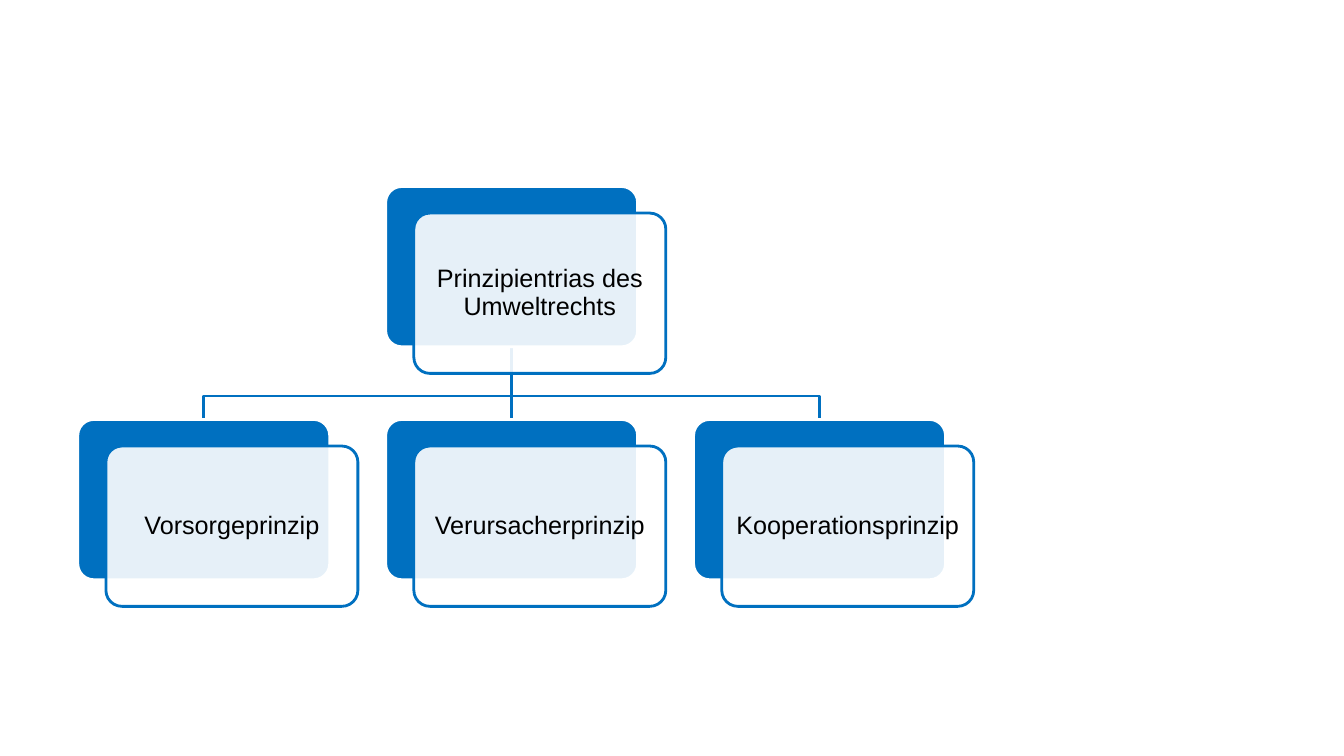
from lxml import etree
from pptx import Presentation
from pptx.dml.color import RGBColor
from pptx.enum.shapes import MSO_CONNECTOR, MSO_SHAPE
from pptx.enum.text import MSO_ANCHOR, PP_ALIGN
from pptx.oxml.ns import qn
from pptx.util import Cm, Pt

ROUNDED = MSO_SHAPE.ROUNDED_RECTANGLE
STRAIGHT = MSO_CONNECTOR.STRAIGHT
MIDDLE = MSO_ANCHOR.MIDDLE
CENTER = PP_ALIGN.CENTER
TOP_SIDE, BOTTOM_SIDE = 0, 2

BLUE, WHITE, BLACK = "0070C0", "FFFFFF", "000000"
CARD_WIDTH, CARD_HEIGHT = Cm(6.35), Cm(4.04)
SHIFT_X, SHIFT_Y = Cm(0.71), Cm(0.67)
CHART_LEFT, CHART_TOP = Cm(1.96), Cm(4.7)
COLUMN_STEP, ROW_STEP = Cm(7.76), Cm(5.87)
BEND_ABOVE_CHILD = Cm(0.59)

ROOT = "Prinzipientrias des Umweltrechts"
PRINCIPLES = ["Vorsorgeprinzip", "Verursacherprinzip", "Kooperationsprinzip"]


def color(hex_code):
    return RGBColor.from_string(hex_code)


def set_line(shape, hex_code):
    shape.line.color.rgb = color(hex_code)
    shape.line.width = Pt(2)


def add_panel(page, left, top, fill, line):
    panel = page.shapes.add_shape(ROUNDED, left, top, CARD_WIDTH, CARD_HEIGHT)
    panel.adjustments[0] = 0.1
    panel.shadow.inherit = False
    panel.fill.solid()
    panel.fill.fore_color.rgb = color(fill)
    set_line(panel, line)
    return panel


def add_card(page, left, top, text):
    """Draw a blue panel with a translucent label in front; return the blue panel."""
    back = add_panel(page, left, top, BLUE, WHITE)
    label = add_panel(page, left + SHIFT_X, top + SHIFT_Y, WHITE, BLUE)
    fill_color = label.fill._xPr.find(qn("a:solidFill"))[0]
    etree.SubElement(fill_color, qn("a:alpha"), val="90000")

    frame = label.text_frame
    frame.word_wrap = True
    frame.vertical_anchor = MIDDLE
    frame.margin_left = frame.margin_right = Cm(0.18)
    frame.margin_top = frame.margin_bottom = Cm(0.18)
    para = frame.paragraphs[0]
    para.text = text
    para.alignment = CENTER
    para.line_spacing = 0.9
    para.font.name = "Arial"
    para.font.size = Pt(18)
    para.font.color.rgb = color(BLACK)
    return back


def add_branch(page, start_x, start_y, end_x, end_y):
    bend_y = end_y - BEND_ABOVE_CHILD
    builder = page.shapes.build_freeform(start_x, start_y)
    builder.add_line_segments(
        [(start_x, bend_y), (end_x, bend_y), (end_x, end_y)], close=False)
    branch = builder.convert_to_shape()
    branch.shadow.inherit = False
    branch.fill.background()
    set_line(branch, BLUE)


def add_trunk(page, x, start_y, end_y):
    trunk = page.shapes.add_connector(STRAIGHT, x, start_y, x, end_y)
    set_line(trunk, BLUE)
    etree.SubElement(trunk._element.spPr, qn("a:effectLst"))
    return trunk


def add_hierarchy(page, left, top):
    """Draw the links first, so that the cards lie over them."""
    middle = len(PRINCIPLES) // 2
    lefts = [left + column * COLUMN_STEP for column in range(len(PRINCIPLES))]
    centers = [card_left + CARD_WIDTH // 2 for card_left in lefts]
    root_bottom, child_top = top + CARD_HEIGHT, top + ROW_STEP

    for column, center in enumerate(centers):
        if column != middle:
            add_branch(page, centers[middle], root_bottom, center, child_top)
    trunk = add_trunk(page, centers[middle], root_bottom, child_top)

    root = add_card(page, lefts[middle], top, ROOT)
    children = [add_card(page, card_left, child_top, name)
                for card_left, name in zip(lefts, PRINCIPLES)]
    trunk.begin_connect(root, BOTTOM_SIDE)
    trunk.end_connect(children[middle], TOP_SIDE)


def main():
    deck = Presentation()
    deck.slide_width, deck.slide_height = Cm(33.87), Cm(19.05)
    page = deck.slides.add_slide(deck.slide_layouts[6])
    add_hierarchy(page, CHART_LEFT, CHART_TOP)
    deck.save("out.pptx")


if __name__ == "__main__":
    main()
